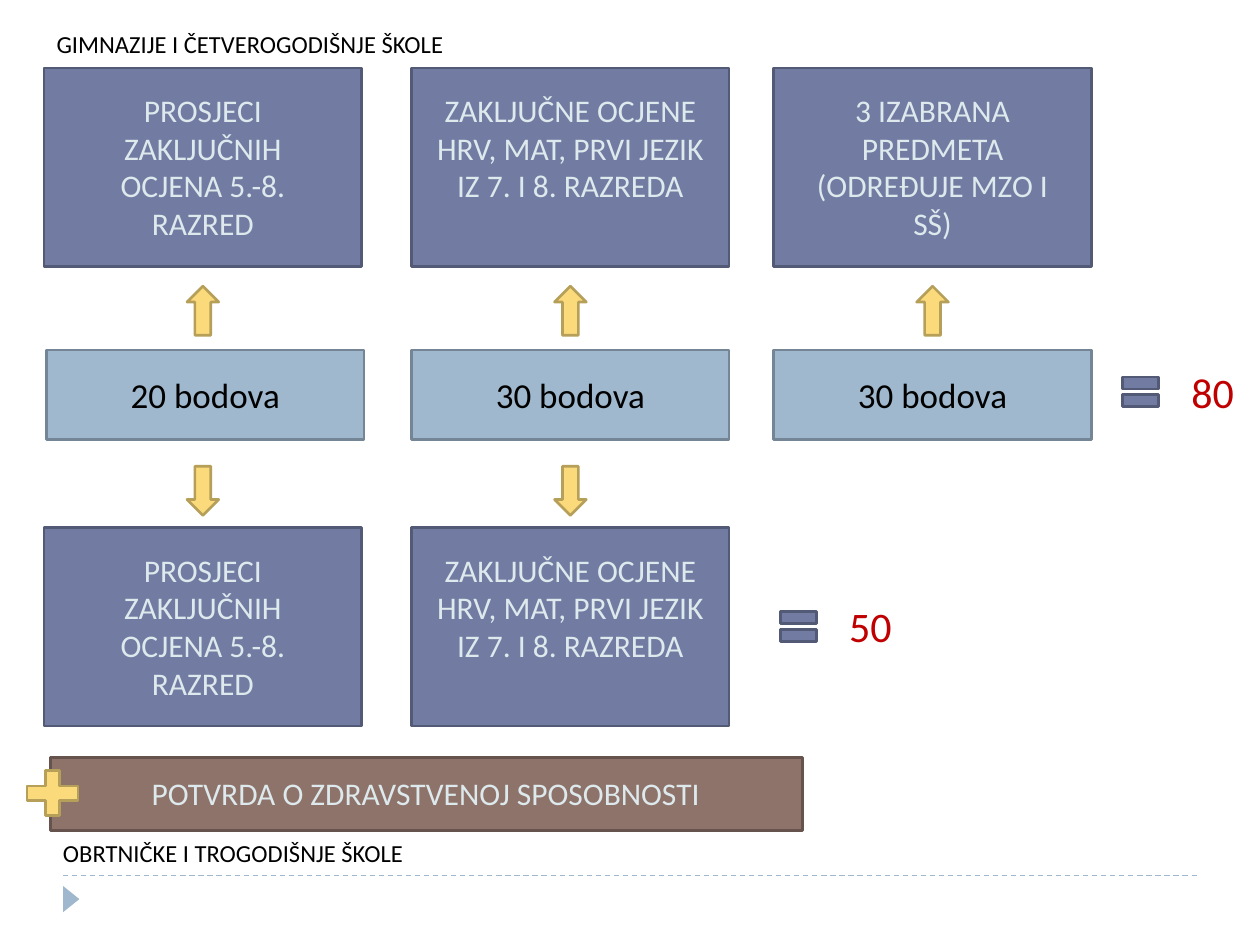
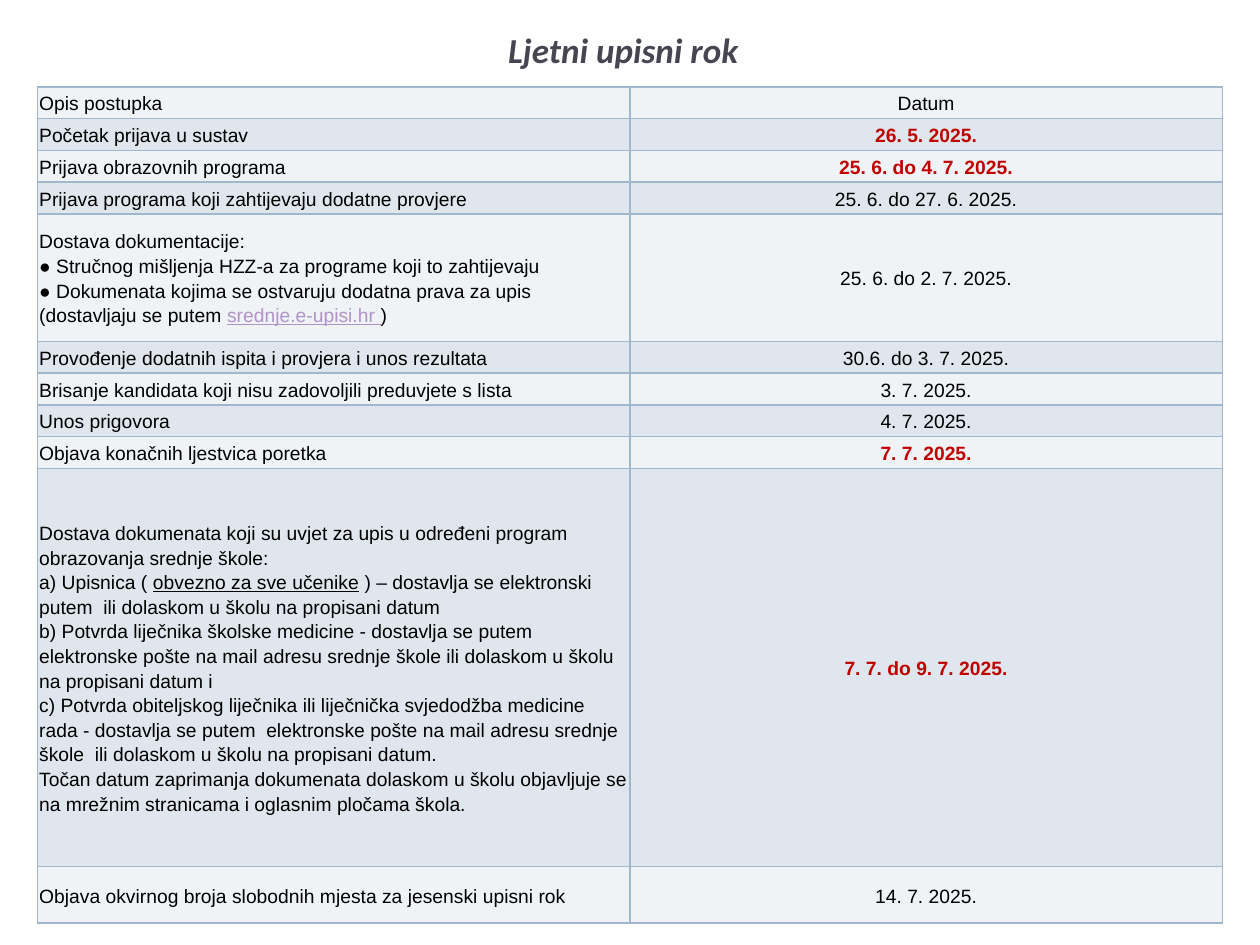
from dataclasses import dataclass
from typing import Any, NamedTuple

from lxml import etree
from pptx import Presentation, util as u
from pptx.dml.color import RGBColor
from pptx.enum import dml, shapes, text
from pptx.oxml import ns

COLORS = {
    "violet": "727CA3", "violet_edge": "535A76",
    "blue": "9FB8CD", "blue_edge": "748695",
    "brown": "8E736A", "brown_edge": "67534D",
    "yellow": "FADA7A", "yellow_edge": "B69F59",
    "pale": "DDE9EC", "black": "000000", "red": "C00000",
    "title": "464653", "link": "B292CA",
    "row_light": "EFF3F6", "row_dark": "DFE6ED",
}
SHAPE = shapes.MSO_SHAPE
CENTER, LEFT = text.PP_ALIGN.CENTER, text.PP_ALIGN.LEFT


class Box(NamedTuple):
    """Left, top, width and height in centimetres."""
    x: float
    y: float
    w: float
    h: float

    def emu(self) -> list[u.Length]:
        return [u.Cm(v) for v in self]

    def inner(self, w: float, h: float) -> "Box":
        """A box of the given size, centred in this one."""
        return Box(self.x + (self.w - w) / 2, self.y + (self.h - h) / 2, w, h)


@dataclass(frozen=True)
class Style:
    size: float
    color: str = "black"
    font: str = "Calibri"
    bold: bool = False
    italic: bool = False
    underline: bool = False


class Run(NamedTuple):
    text: str
    style: Style


@dataclass(frozen=True)
class Column:
    x: float
    subject: str
    text_w: float
    points: str
    points_x: float
    vocational: bool = True


@dataclass(frozen=True)
class Total:
    x: float
    y: float
    value: str


@dataclass(frozen=True)
class Step:
    task: list[list[Run]]
    date: str
    height: float = 0.64
    key_date: bool = False


CARD = Style(18, "pale")
POINTS = Style(20)
SUM = Style(24, "red")
HEADING = Style(14)
TITLE = Style(20, "title", bold=True, italic=True)
CELL = Style(11, font="Arial")
KEY_DATE = Style(11, "red", "Arial", bold=True)
UNDERLINED = Style(11, font="Arial", underline=True)
LINK = Style(11, "link", "Arial", underline=True)

CARD_W, CARD_H = 6.4, 4
GRAMMAR_Y, POINTS_Y, VOCATIONAL_Y = 1.37, 7.06, 10.64
POINTS_H = 1.8

COLUMNS = [
    Column(0.89, "PROSJECI ZAKLJUČNIH OCJENA 5.-8. RAZRED", 5.41, "20 bodova", 0.94),
    Column(8.3, "ZAKLJUČNE OCJENE HRV, MAT, PRVI JEZIK IZ 7. I 8. RAZREDA", 5.89,
           "30 bodova", 8.3),
    Column(15.6, "3 IZABRANA PREDMETA (ODREĐUJE MZO I SŠ)", 5.41, "30 bodova", 15.6,
           vocational=False),
]
TOTALS = [Total(22.5, 7.39, "80"), Total(15.6, 12.12, "50")]


def plain(*lines: str) -> list[list[Run]]:
    """One paragraph of ordinary cell text per line."""
    return [[Run(line, CELL)] for line in lines]


STEPS = [
    Step(plain("Opis postupka"), "Datum"),
    Step(plain("Početak prijava u sustav"), "26. 5. 2025.", key_date=True),
    Step(plain("Prijava obrazovnih programa"), "25. 6. do 4. 7. 2025.", key_date=True),
    Step(plain("Prijava programa koji zahtijevaju dodatne provjere"),
         "25. 6. do 27. 6. 2025."),
    Step(plain("Dostava dokumentacije:",
               "● Stručnog mišljenja HZZ-a za programe koji to zahtijevaju")
         + [[Run("● Dokumenata kojima se ostvaruju dodatna prava za upis "
                 "(dostavljaju se putem ", CELL),
             Run("srednje.e-upisi.hr ", LINK), Run(")", CELL)]],
         "25. 6. do 2. 7. 2025.", 2.57),
    Step(plain("Provođenje dodatnih ispita i provjera i unos rezultata"),
         "30.6. do 3. 7. 2025."),
    Step(plain("Brisanje kandidata koji nisu zadovoljili preduvjete s lista"),
         "3. 7. 2025."),
    Step(plain("Unos prigovora"), "4. 7. 2025."),
    Step(plain("Objava konačnih ljestvica poretka"), "7. 7. 2025.", key_date=True),
    Step(plain("Dostava dokumenata koji su uvjet za upis u određeni program "
               "obrazovanja srednje škole:")
         + [[Run("a) Upisnica ( ", CELL), Run("obvezno za sve učenike", UNDERLINED),
             Run(" ) – dostavlja se elektronski putem  ili dolaskom u školu na "
                 "propisani datum", CELL)]]
         + plain("b) Potvrda liječnika školske medicine - dostavlja se putem  "
                 "elektronske pošte na mail adresu srednje škole ili dolaskom u školu "
                 "na propisani datum i",
                 "c) Potvrda obiteljskog liječnika ili liječnička svjedodžba medicine "
                 "rada - dostavlja se putem  elektronske pošte na mail adresu srednje "
                 "škole  ili dolaskom u školu na propisani datum.",
                 "Točan datum zaprimanja dokumenata dolaskom u školu objavljuje se na "
                 "mrežnim stranicama i oglasnim pločama škola."),
         "7. 7. do 9. 7. 2025.", 8.03, True),
    Step(plain("Objava okvirnog broja slobodnih mjesta za jesenski upisni rok"),
         "14. 7. 2025.", 1.14),
]


def rgb(name: str) -> RGBColor:
    return RGBColor.from_string(COLORS[name])


def set_all(obj: Any, values: dict[str, Any]) -> None:
    for name, value in values.items():
        setattr(obj, name, value)


def write(tf: Any, paragraphs: list[list[Run]], align: Any,
          spacing: float | None = None) -> None:
    for i, runs in enumerate(paragraphs):
        p = tf.paragraphs[0] if i == 0 else tf.add_paragraph()
        set_all(p, {"alignment": align, "line_spacing": spacing})
        for run in runs:
            r, style = p.add_run(), run.style
            r.text = run.text
            set_all(r.font, {"name": style.font, "size": u.Pt(style.size),
                             "bold": style.bold, "italic": style.italic,
                             "underline": style.underline})
            r.font.color.rgb = rgb(style.color)


def add_label(s: Any, box: Box, label: str, style: Style, align: Any = CENTER) -> None:
    tf = s.shapes.add_textbox(*box.emu()).text_frame
    tf.word_wrap = True
    write(tf, [[Run(label, style)]], align)


def add_figure(s: Any, kind: Any, box: Box, color: str, edged: bool = True) -> Any:
    sp = s.shapes.add_shape(kind, *box.emu())
    sp.shadow.inherit = False
    sp.fill.solid()
    sp.fill.fore_color.rgb = rgb(color)
    if edged:
        sp.line.color.rgb = rgb(f"{color}_edge")
        sp.line.width = u.Pt(1.5)
    else:
        sp.line.fill.background()
    return sp


def add_master_footer(prs: Any, s: Any) -> None:
    """Draw the footer on a slide, then move it to the master."""
    rule = s.shapes.add_connector(shapes.MSO_CONNECTOR.STRAIGHT, u.Cm(1.27), u.Cm(17.65),
                                  u.Cm(24.13), u.Cm(17.65))
    set_all(rule.line, {"width": u.Pt(0.75), "dash_style": dml.MSO_LINE.DASH})
    rule.line.color.rgb = rgb("blue")
    etree.SubElement(rule.element.spPr, ns.qn("a:effectLst"))
    marker = add_figure(s, SHAPE.ISOSCELES_TRIANGLE, Box(1.17, 17.96, 0.53, 0.33),
                        "blue", edged=False)
    marker.rotation = 90
    for number, sp in enumerate((rule, marker), 101):
        sp.element.xpath("./*/p:cNvPr")[0].set("id", str(number))
        prs.slide_master.shapes.element.append(sp.element)


def add_card(s: Any, column: Column, y: float) -> None:
    box = Box(column.x, y, CARD_W, CARD_H)
    add_figure(s, SHAPE.RECTANGLE, box, "violet")
    add_label(s, box.inner(column.text_w, 3.33), column.subject, CARD)


def add_arrow(s: Any, kind: Any, column: Column, y: float) -> None:
    add_figure(s, kind, Box(column.x, y, CARD_W, 0.99).inner(0.64, 0.99), "yellow")


def fill_points_slide(s: Any) -> None:
    for column in COLUMNS:
        add_card(s, column, GRAMMAR_Y)
        add_arrow(s, SHAPE.UP_ARROW, column, 5.77)
        box = Box(column.points_x, POINTS_Y, CARD_W, POINTS_H)
        add_figure(s, SHAPE.RECTANGLE, box, "blue")
        add_label(s, box.inner(5.41, 1.12), column.points, POINTS)
        if column.vocational:
            add_arrow(s, SHAPE.DOWN_ARROW, column, 9.4)
            add_card(s, column, VOCATIONAL_Y)
    for total in TOTALS:
        add_figure(s, SHAPE.MATH_EQUAL, Box(total.x, total.y, 0.99, 1.02), "violet")
        add_label(s, Box(total.x + 0.94, total.y - 0.13, 2.01, 1.27), total.value, SUM)
    add_figure(s, SHAPE.RECTANGLE, Box(1.02, 15.27, 15.16, 1.47), "brown")
    add_label(s, Box(0.89, 15.47, 15.39, 1.02), "POTVRDA O ZDRAVSTVENOJ SPOSOBNOSTI", CARD)
    add_figure(s, SHAPE.MATH_PLUS, Box(0.36, 15.37, 1.4, 1.24), "yellow")
    add_label(s, Box(0.89, 0.46, 13.89, 0.86), "GIMNAZIJE I ČETVEROGODIŠNJE ŠKOLE",
              HEADING, LEFT)
    add_label(s, Box(1.02, 16.76, 16.61, 0.86), "OBRTNIČKE I TROGODIŠNJE ŠKOLE",
              HEADING, LEFT)


def set_title(s: Any, label: str, box: Box) -> None:
    title = s.shapes.title
    set_all(title, dict(zip(("left", "top", "width", "height"), box.emu())))
    tf = title.text_frame
    set_all(tf, {"word_wrap": True, "auto_size": text.MSO_AUTO_SIZE.NONE,
                 "vertical_anchor": text.MSO_ANCHOR.MIDDLE})
    write(tf, [[Run(label, TITLE)]], CENTER)


def add_borders(cell: Any) -> None:
    tc_pr = cell._tc.get_or_add_tcPr()
    for i, side in enumerate(("lnL", "lnR", "lnT", "lnB")):
        ln = etree.Element(ns.qn(f"a:{side}"), w=str(u.Pt(1)))
        fill = etree.SubElement(ln, ns.qn("a:solidFill"))
        etree.SubElement(fill, ns.qn("a:srgbClr"), val=COLORS["blue"])
        tc_pr.insert(i, ln)


def fill_cell(cell: Any, paragraphs: list[list[Run]], align: Any, color: str) -> None:
    margins = {f"margin_{side}": u.Cm(0.03) for side in ("left", "right", "top", "bottom")}
    set_all(cell, margins | {"vertical_anchor": text.MSO_ANCHOR.MIDDLE})
    cell.fill.solid()
    cell.fill.fore_color.rgb = rgb(color)
    add_borders(cell)
    write(cell.text_frame, paragraphs, align, 1.15)


def fill_schedule_slide(s: Any) -> None:
    set_title(s, "Ljetni upisni rok", Box(7.7, 0.43, 9.73, 1.12))
    box = Box(0.76, 1.75, 23.88, sum(step.height for step in STEPS))
    table = s.shapes.add_table(len(STEPS), 2, *box.emu()).table
    for i, step in enumerate(STEPS):
        table.rows[i].height = u.Cm(step.height)
        color = "row_dark" if i % 2 else "row_light"
        date = Run(step.date, KEY_DATE if step.key_date else CELL)
        fill_cell(table.cell(i, 0), step.task, LEFT, color)
        fill_cell(table.cell(i, 1), [[date]], CENTER, color)


def main() -> None:
    prs = Presentation()
    set_all(prs, {"slide_width": u.Cm(25.4), "slide_height": u.Cm(19.05)})
    title_only, blank = prs.slide_layouts[5], prs.slide_layouts[6]
    points = prs.slides.add_slide(blank)
    add_master_footer(prs, points)
    fill_points_slide(points)
    fill_schedule_slide(prs.slides.add_slide(title_only))
    prs.save("out.pptx")


if __name__ == "__main__":
    main()
